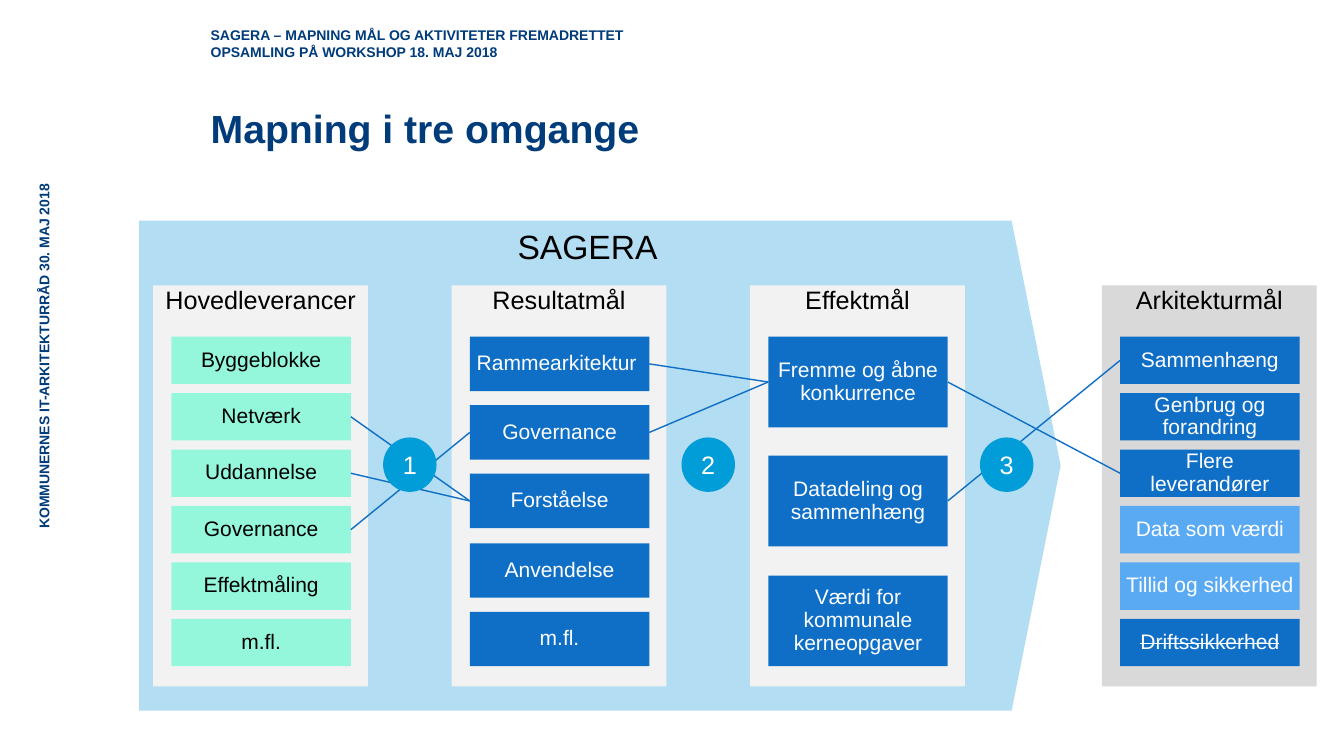
from lxml.etree import SubElement
from pptx import Presentation
from pptx.dml.color import RGBColor as Rgb
from pptx.enum.shapes import MSO_CONNECTOR as Link, MSO_SHAPE as Kind
from pptx.enum.text import MSO_ANCHOR as Anchor, PP_ALIGN as Align
from pptx.oxml.ns import qn
from pptx.util import Emu, Pt

NAVY = Rgb(0x00, 0x3B, 0x7A)
PALE = Rgb(0xB3, 0xDD, 0xF2)
LIGHT = Rgb(0xF2, 0xF2, 0xF2)
GREY = Rgb(0xD9, 0xD9, 0xD9)
MINT = Rgb(0x94, 0xF7, 0xDC)
BLUE = Rgb(0x0F, 0x6F, 0xC6)
SKY = Rgb(0x59, 0xAA, 0xF2)
CYAN = Rgb(0x00, 0x9D, 0xD9)
BLACK = Rgb(0, 0, 0)
WHITE = Rgb(255, 255, 255)

TOP, BOTTOM = 334, 661
LEFT, RIGHT = 1, 3
STRUCK = "Driftssikkerhed"

COLUMNS = [
    (152, "Hovedleverancer", LIGHT, 47, MINT, BLACK,
     ["Byggeblokke", "Netværk", "Uddannelse", "Governance", "Effektmåling", "m.fl."]),
    (448, "Resultatmål", LIGHT, 54, BLUE, WHITE,
     ["Rammearkitektur ", "Governance", "Forståelse", "Anvendelse", "m.fl."]),
    (744, "Effektmål", LIGHT, 90, BLUE, WHITE,
     ["Fremme og åbne konkurrence", "Datadeling og sammenhæng",
      "Værdi for kommunale kerneopgaver"]),
    (1093, "Arkitekturmål", GREY, 47, BLUE, WHITE,
     ["Sammenhæng", "Genbrug og forandring", "Flere leverandører",
      "Data som værdi", "Tillid og sikkerhed", STRUCK]),
]
PALER = {"Data som værdi", "Tillid og sikkerhed"}

LINKS = [
    ((2, 1), (3, 0)), ((2, 0), (3, 2)),
    ((0, 2), (1, 2)), ((0, 3), (1, 1)), ((0, 1), (1, 2)),
    ((1, 0), (2, 0)), ((1, 1), (2, 0)),
]


def px(n):
    return Emu(n * 9144)


def write(shape, text, size, color, bold=False, strike=False, align=Align.CENTER,
          anchor=Anchor.MIDDLE, pad=(0, 0, 0, 0), space=None):
    frame = shape.text_frame
    frame.word_wrap = True
    frame.vertical_anchor = anchor
    (frame.margin_left, frame.margin_top,
     frame.margin_right, frame.margin_bottom) = map(px, pad)
    for i, line in enumerate(text.split("\n")):
        par = frame.add_paragraph() if i else frame.paragraphs[0]
        par.alignment = align
        if space:
            par.line_spacing = space
        run = par.add_run()
        run.text = line
        font = run.font
        font.name, font.size, font.bold = "Arial", Pt(size), bold
        font.color.rgb = color
        if strike:
            run._r.get_or_add_rPr().set("strike", "sngStrike")


def label(slide, area, text, size, **style):
    box = slide.shapes.add_textbox(*map(px, area))
    write(box, text, size, NAVY, bold=True, **style)
    return box


def block(slide, kind, area, fill, text, size, color, **style):
    shape = slide.shapes.add_shape(kind, *map(px, area))
    shape.shadow.inherit = False
    shape.fill.solid()
    shape.fill.fore_color.rgb = fill
    shape.line.fill.background()
    write(shape, text, size, color, **style)
    return shape


def column(slide, x, head, back, high, fill, color, items):
    block(slide, Kind.RECTANGLE, (x, 283, 213, 398), back, head, 18, BLACK,
          pad=(10, 10, 10, 377), space=0.9)
    step = (BOTTOM - TOP - high) / (len(items) - 1)
    return [
        block(slide, Kind.RECTANGLE, (x + 18, round(TOP + i * step), 178, high),
              SKY if item in PALER else fill, item, 15, color,
              strike=item == STRUCK, pad=(6, 5, 6, 5), space=0.9)
        for i, item in enumerate(items)
    ]


def link(slide, start, end):
    line = slide.shapes.add_connector(Link.STRAIGHT, 0, 0, 0, 0)
    line.begin_connect(start, RIGHT)
    line.end_connect(end, LEFT)
    line.line.color.rgb = BLUE
    line.line.width = Pt(1)
    SubElement(line._element.spPr, qn("a:effectLst"))


def main():
    deck = Presentation()
    deck.slide_width, deck.slide_height = px(1333), px(750)
    slide = deck.slides.add_slide(deck.slide_layouts[6])

    label(slide, (209, 0, 997, 87),
          "SAGERA – MAPNING MÅL OG AKTIVITETER FREMADRETTET\n"
          "OPSAMLING PÅ WORKSHOP 18. MAJ 2018", 10, align=Align.LEFT)
    side = label(slide, (-223, 310, 533, 87),
                 "KOMMUNERNES IT-ARKITEKTURRÅD 30. MAJ 2018", 10)
    side.rotation = 270
    label(slide, (209, 87, 827, 100), "Mapning i tre omgange", 28,
          align=Align.LEFT, anchor=Anchor.BOTTOM, pad=(0, 0, 0, 37), space=0.83)

    arrow = block(slide, Kind.PENTAGON, (138, 219, 914, 486), PALE, "SAGERA", 24,
                  BLACK, anchor=Anchor.TOP, pad=(10, 5, 10, 5))
    arrow.adjustments[0] = 0.1

    goals = [column(slide, *col) for col in COLUMNS]
    for (a, i), (b, j) in LINKS:
        link(slide, goals[a][i], goals[b][j])
    for n in range(3):
        block(slide, Kind.OVAL, (380 + 296 * n, 434, 53, 54), CYAN, str(n + 1), 18, WHITE)

    deck.save("out.pptx")


if __name__ == "__main__":
    main()
